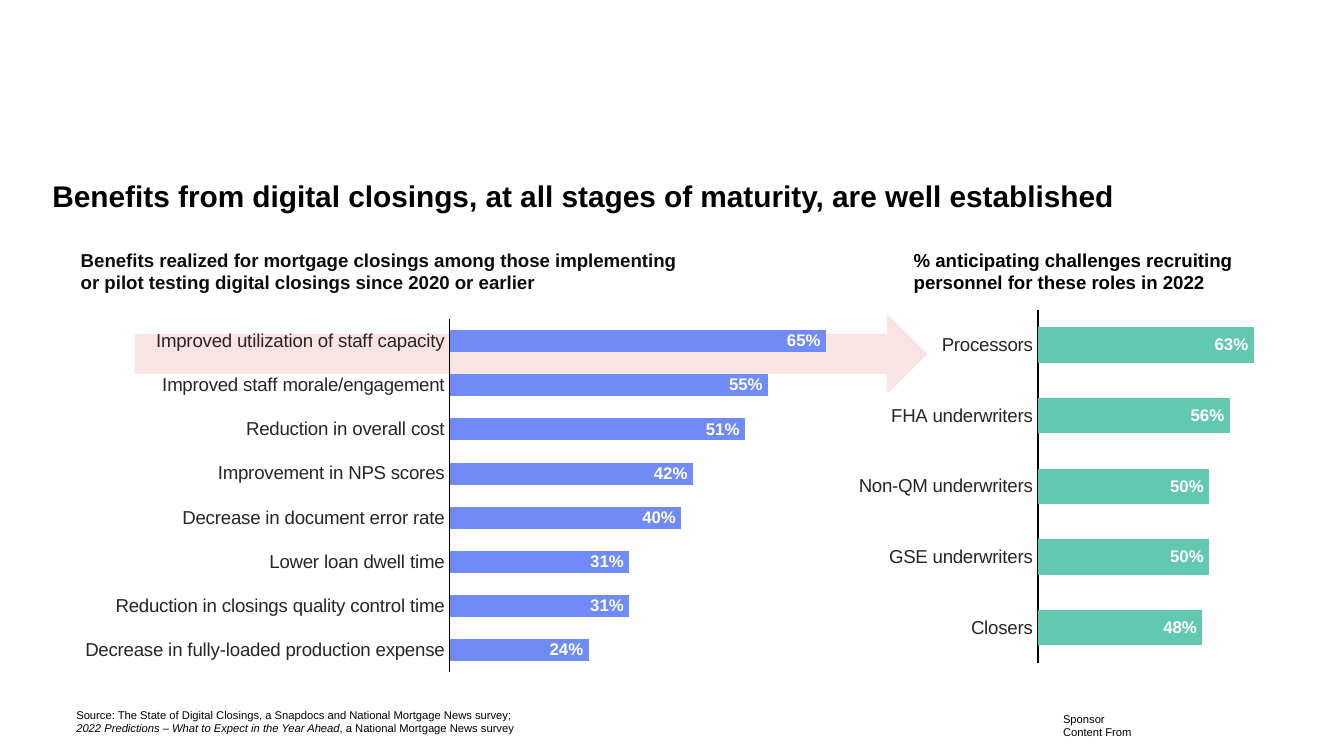
import pptx
import pptx.chart.data
import pptx.dml.color
import pptx.enum.chart
import pptx.enum.shapes
import pptx.enum.text
import pptx.util
from lxml import etree

Pt = pptx.util.Pt
RGBColor = pptx.dml.color.RGBColor
BLACK = RGBColor(0x00, 0x00, 0x00)
NEAR_BLACK = RGBColor(0x0D, 0x0D, 0x0D)
DARK_GREY = RGBColor(0x26, 0x26, 0x26)
WHITE = RGBColor(0xFF, 0xFF, 0xFF)
PINK = RGBColor(0xF9, 0xE3, 0xE3)
BLUE = RGBColor(0x70, 0x8A, 0xF7)
GREEN = RGBColor(0x63, 0xC8, 0xB2)
FONT = "Arial"
CHART_NS = "http://schemas.openxmlformats.org/drawingml/2006/chart"


def set_font(font, size, color, bold=False, italic=False):
    font.name = FONT
    font.size = Pt(size)
    font.bold = bold
    font.italic = italic
    font.color.rgb = color


def add_text(page, lines, left, top, width, height, size=10, color=BLACK,
             bold=False, wrap=True, inset=None):
    """Each line is a list of (text, italic) pairs."""
    box = page.shapes.add_textbox(Pt(left), Pt(top), Pt(width), Pt(height))
    frame = box.text_frame
    frame.word_wrap = wrap
    if inset is not None:
        frame.margin_left = frame.margin_right = Pt(inset)
        frame.margin_top = frame.margin_bottom = Pt(inset)
    for index, line in enumerate(lines):
        para = frame.add_paragraph() if index else frame.paragraphs[0]
        for text, italic in line:
            span = para.add_run()
            span.text = text
            set_font(span.font, size, color, bold, italic)


deck = pptx.Presentation()
deck.slide_width = Pt(720)
deck.slide_height = Pt(405)
page = deck.slides.add_slide(deck.slide_layouts[5])

# Title
title = page.shapes.title
title.left, title.top, title.width, title.height = Pt(20.9), Pt(93.6), Pt(620.6), Pt(29.5)
title.text_frame.text = "Benefits from digital closings, at all stages of maturity, are well established"
title.text_frame.vertical_anchor = pptx.enum.text.MSO_ANCHOR.TOP
para = title.text_frame.paragraphs[0]
para.alignment = pptx.enum.text.PP_ALIGN.LEFT
para.line_spacing = 0.9
set_font(para.runs[0].font, 16, BLACK, bold=True)

# Arrow linking the top benefit to the staffing chart
arrow = page.shapes.add_shape(pptx.enum.shapes.MSO_SHAPE.RIGHT_ARROW,
                              Pt(72.7), Pt(169.2), Pt(423.4), Pt(40.8))
arrow.shadow.inherit = False
arrow.fill.solid()
arrow.fill.fore_color.rgb = PINK
arrow.line.color.rgb = PINK
arrow.line.width = Pt(1)

# Bar charts: frame, bar colour, plot start and width as shares of the frame, data
benefits = [
    ("Decrease in fully-loaded production expense", 0.24),
    ("Reduction in closings quality control time", 0.31),
    ("Lower loan dwell time", 0.31),
    ("Decrease in document error rate", 0.40),
    ("Improvement in NPS scores", 0.42),
    ("Reduction in overall cost", 0.51),
    ("Improved staff morale/engagement", 0.55),
    ("Improved utilization of staff capacity", 0.65),
]
roles = [
    ("Closers", 0.48),
    ("GSE underwriters", 0.50),
    ("Non-QM underwriters", 0.50),
    ("FHA underwriters", 0.56),
    ("Processors", 0.63),
]
charts = [
    ((36.7, 167, 425.5, 197.3), BLUE, 0.48, 0.51, benefits),
    ((455.8, 162, 233.3, 197.3), GREEN, 0.43, 0.55, roles),
]
for frame, color, plot_left, plot_width, rows in charts:
    data = pptx.chart.data.CategoryChartData(number_format="0%")
    data.categories = [name for name, share in rows]
    data.add_series("Series 1", [share for name, share in rows])
    chart = page.shapes.add_chart(pptx.enum.chart.XL_CHART_TYPE.BAR_CLUSTERED,
                                  *map(Pt, frame), data).chart
    chart.has_legend = False
    chart.has_title = False
    set_font(chart.font, 10, BLACK)

    category_axis = chart.category_axis
    category_axis.major_tick_mark = pptx.enum.chart.XL_TICK_MARK.NONE
    category_axis.format.line.color.rgb = BLACK
    category_axis.format.line.width = Pt(0.75)
    set_font(category_axis.tick_labels.font, 10, DARK_GREY)
    value_axis = chart.value_axis
    value_axis.minimum_scale = 0
    value_axis.maximum_scale = 0.7
    value_axis.has_major_gridlines = False
    value_axis.visible = False

    plot = chart.plots[0]
    plot.gap_width = 100
    plot.vary_by_categories = False
    bars = plot.series[0]
    bars.format.fill.solid()
    bars.format.fill.fore_color.rgb = color
    plot.has_data_labels = True
    labels = plot.data_labels
    labels.show_value = True
    labels.number_format = "0%"
    labels.number_format_is_linked = False
    labels.position = pptx.enum.chart.XL_LABEL_POSITION.INSIDE_END
    set_font(labels.font, 9, WHITE, bold=True)

    # Fixed plot area inside the chart frame
    area = chart.element.find(f".//{{{CHART_NS}}}plotArea")
    for old_layout in area.findall(f"{{{CHART_NS}}}layout"):
        area.remove(old_layout)
    layout = etree.Element(f"{{{CHART_NS}}}layout")
    manual = etree.SubElement(layout, f"{{{CHART_NS}}}manualLayout")
    for tag, value in [("layoutTarget", "inner"), ("xMode", "edge"), ("yMode", "edge"),
                       ("x", plot_left), ("y", 0.02), ("w", plot_width), ("h", 0.96)]:
        etree.SubElement(manual, f"{{{CHART_NS}}}{tag}", val=str(value))
    area.insert(0, layout)

# Chart headings
add_text(page, [[("Benefits realized for mortgage closings among those implementing "
                  "or pilot testing digital closings since 2020 or earlier", False)]],
         36.2, 129.6, 341.3, 31.7, color=NEAR_BLACK, bold=True)
add_text(page, [[("% anticipating challenges recruiting personnel for these roles in 2022", False)]],
         482.4, 129.6, 193.7, 31.7, bold=True)

# Source note and sponsor label
add_text(page, [
    [("Source: The State of Digital Closings, a Snapdocs and National Mortgage News survey;", False)],
    [("2022 Predictions – What to Expect in the Year Ahead", True),
     (", a National Mortgage News survey", False)],
], 33.8, 375.8, 252.7, 21.6, size=6, wrap=False)
add_text(page, [[("Sponsor", False)], [("Content From", False)]],
         569.5, 381.6, 84.2, 14.4, size=6, inset=0)

deck.save("out.pptx")
